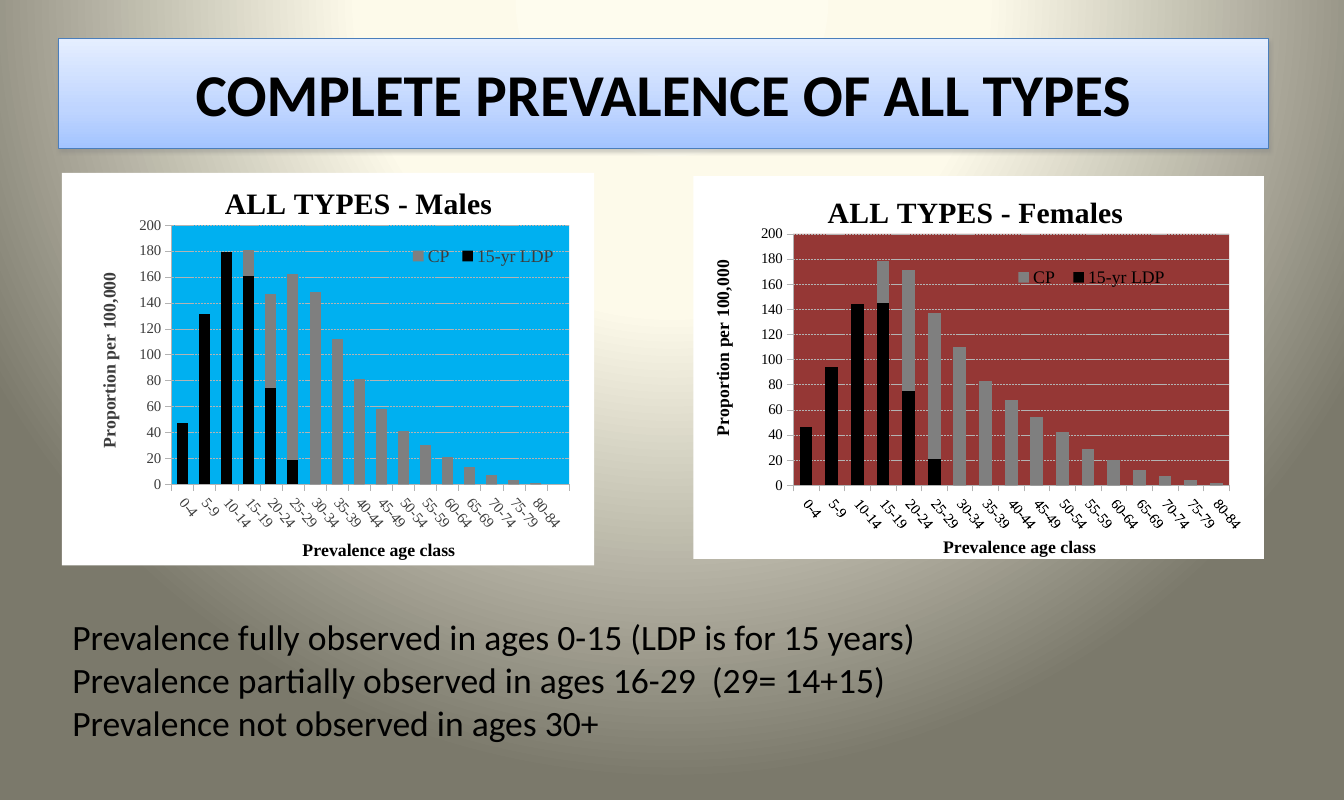
from pptx import Presentation
from pptx.chart.data import CategoryChartData
from pptx.dml.color import RGBColor
from pptx.enum.chart import XL_CHART_TYPE as ChartType, XL_LEGEND_POSITION as LegendPos
from pptx.enum.dml import MSO_LINE_DASH_STYLE as Dash
from pptx.enum.shapes import MSO_SHAPE as Shape
from pptx.enum.text import MSO_ANCHOR as Anchor, MSO_AUTO_SIZE as AutoSize, PP_ALIGN as Align
from pptx.oxml import parse_xml
from pptx.oxml.ns import nsdecls, qn
from pptx.util import Inches, Pt

SERIF = "Times New Roman"
AGE_CLASSES = [f"{age}-{age + 4}" for age in range(0, 85, 5)]

# Positions inside a chart are shares of its width and height
MALES = dict(
    heading="ALL TYPES - Males", box=(0.58, 1.62, 4.99, 3.68), backdrop="00B0F0",
    ink="3C3C3C", number_format="0", ages=AGE_CLASSES + [""], overlay=False,
    observed=[47, 131, 179, 161, 74, 19] + [0] * 11 + [None],
    complete=[0, 0, 0, 20, 73, 143, 148, 112, 81, 58, 41, 30, 21, 13, 7, 3, 1, None],
    plot_at=(0.206, 0.133, 0.747, 0.661), heading_at=(0.296, 0.016),
    age_title_at=(0.446, 0.924), rate_title_at=(0.062, 0.245),
    legend_at=(0.647, 0.177, 0.29, 0.07))
FEMALES = dict(
    heading="ALL TYPES - Females", box=(6.5, 1.65, 5.35, 3.62), backdrop="953735",
    ink="000000", number_format="General", ages=AGE_CLASSES, overlay=True,
    observed=[46, 94, 144, 145, 75, 21] + [0] * 11,
    complete=[0, 0, 0, 33, 96, 116, 110, 83, 68, 54, 42, 29, 20, 12, 7, 4, 2],
    plot_at=(0.175, 0.151, 0.764, 0.657), heading_at=(0.226, 0.033),
    age_title_at=(0.432, 0.932), rate_title_at=(0.026, 0.215),
    legend_at=(0.548, 0.23, 0.3, 0.07))


def rgb(color):
    return RGBColor.from_string(color)


def style_font(font, size, color, name=SERIF, bold=False):
    font.size, font.name, font.bold = Pt(size), name, bold
    font.color.rgb = rgb(color)


def write(frame, text, size=24, color="000000", name="Calibri", bold=False, align=None):
    for index, line in enumerate(text.split("\n")):
        paragraph = frame.add_paragraph() if index else frame.paragraphs[0]
        paragraph.alignment = align
        run = paragraph.add_run()
        run.text = line
        style_font(run.font, size, color, name, bold)


def set_gradient(fill, element, stops, direction):
    """Stops are (percent, colour); direction is the XML of the shading."""
    fill.gradient()
    gradient = next(element.iter(qn("a:gradFill")))
    gradient.clear()
    marks = "".join(f'<a:gs pos="{percent * 1000}"><a:srgbClr val="{color}"/></a:gs>'
                    for percent, color in stops)
    gradient.append(parse_xml(f'<a:gsLst {nsdecls("a")}>{marks}</a:gsLst>'))
    gradient.append(parse_xml(direction))


def area_fill(color):
    return parse_xml(f'<c:spPr {nsdecls("c", "a")}><a:solidFill><a:srgbClr val="{color}"/>'
                     '</a:solidFill><a:ln><a:noFill/></a:ln></c:spPr>')


def place(element, position, target=""):
    """Fix a chart part at x, y and perhaps width, height, as shares of the chart."""
    for old in element.findall(qn("c:layout")):
        element.remove(old)
    modes = '<c:xMode val="edge"/><c:yMode val="edge"/>'
    sizes = "".join(f'<c:{key} val="{share}"/>' for key, share in zip("xywh", position))
    layout = parse_xml(f'<c:layout {nsdecls("c")}><c:manualLayout>{target}{modes}{sizes}'
                       '</c:manualLayout></c:layout>')
    for tag in ("c:tx", "c:legendPos"):
        anchor = element.find(qn(tag))
        if anchor is not None:
            anchor.addnext(layout)
            return
    element.insert(0, layout)


def rotate(element, degrees):
    body = next(element.iter(qn("a:bodyPr")))
    body.set("rot", str(degrees * 60000))
    body.set("vert", "horz")


def add_title(title, text, position, **style):
    write(title.text_frame, text, name=SERIF, bold=True, **style)
    place(title._element, position)


def style_axis(axis, ink):
    style_font(axis.tick_labels.font, 10, ink)
    axis.format.line.color.rgb = rgb("B3B3B3")
    axis.format.line.width = Pt(0.25)


def add_prevalence_chart(slide, group):
    data = CategoryChartData()
    data.categories = group["ages"]
    data.add_series("15-yr LDP", group["observed"])
    data.add_series("CP", group["complete"])
    chart = slide.shapes.add_chart(ChartType.COLUMN_STACKED,
                                   *map(Inches, group["box"]), data).chart
    style_font(chart.font, 10, "000000", "Arial")
    ink = group["ink"]

    # Bars
    plot = chart.plots[0]
    plot.gap_width, plot.overlap, plot.vary_by_categories = 100, 100, False
    for series, color in zip(plot.series, ("000000", "7F7F7F")):
        series.format.fill.solid()
        series.format.fill.fore_color.rgb = rgb(color)

    # Axes
    ages, rates = chart.category_axis, chart.value_axis
    for axis in (ages, rates):
        style_axis(axis, ink)
    rotate(ages._element.find(qn("c:txPr")), 50)
    rates.minimum_scale, rates.maximum_scale, rates.major_unit = 0, 200, 20
    rates.tick_labels.number_format = group["number_format"]
    rates.tick_labels.number_format_is_linked = False
    grid = rates.major_gridlines.format.line
    grid.color.rgb, grid.width = rgb("B3B3B3"), Pt(0.25)
    grid.dash_style = Dash.SQUARE_DOT

    # Titles
    add_title(chart.chart_title, group["heading"], group["heading_at"], size=20)
    add_title(ages.axis_title, "Prevalence age class", group["age_title_at"], size=12)
    rate_title = rates.axis_title
    add_title(rate_title, "Proportion per 100,000", group["rate_title_at"],
              size=12, color=ink)
    rotate(rate_title._element, -90)

    # Legend
    chart.has_legend = True
    chart.legend.position = LegendPos.RIGHT
    chart.legend.include_in_layout = group["overlay"]
    style_font(chart.legend.font, 12, ink)
    place(chart.legend._element, group["legend_at"])

    # Plot area and backdrops
    chart_element = chart._chartSpace.find(qn("c:chart"))
    plot_area = chart_element.find(qn("c:plotArea"))
    place(plot_area, group["plot_at"], '<c:layoutTarget val="inner"/>')
    plot_area.append(area_fill(group["backdrop"]))
    chart_element.addnext(area_fill("FFFFFF"))


def add_banner(slide, text):
    banner = slide.shapes.add_shape(Shape.RECTANGLE, Inches(0.55), Inches(0.36),
                                    Inches(11.34), Inches(1.03))
    properties = banner._element.spPr
    set_gradient(banner.fill, properties, [(0, "E5EEFF"), (65, "BFD5FF"), (100, "A3C4FF")],
                 f'<a:lin {nsdecls("a")} ang="5400000" scaled="0"/>')
    banner.line.color.rgb, banner.line.width = rgb("4A7EBB"), Pt(0.75)
    banner.shadow.inherit = False
    properties.find(qn("a:effectLst")).append(parse_xml(
        f'<a:outerShdw {nsdecls("a")} blurRad="{Pt(3.1)}" dist="{Pt(1.6)}" dir="5400000" '
        'rotWithShape="0"><a:srgbClr val="808080"><a:alpha val="38000"/></a:srgbClr>'
        '</a:outerShdw>'))
    banner.text_frame.vertical_anchor = Anchor.MIDDLE
    write(banner.text_frame, text, size=40, bold=True, align=Align.CENTER)


def add_notes_on_ages(slide, text):
    frame = slide.shapes.add_textbox(Inches(0.58), Inches(5.72),
                                     Inches(8.4), Inches(1.31)).text_frame
    frame.word_wrap = True
    frame.auto_size = AutoSize.SHAPE_TO_FIT_TEXT
    write(frame, text)


def main():
    deck = Presentation()
    deck.slide_width, deck.slide_height = Inches(12.6), Inches(7.5)
    slide = deck.slides.add_slide(deck.slide_layouts[6])
    set_gradient(slide.background.fill, slide.element,
                 [(0, "FEFCEE"), (40, "FDFAEA"), (100, "7B796B")],
                 f'<a:path {nsdecls("a")} path="circle">'
                 '<a:fillToRect l="50000" t="-80000" r="50000" b="180000"/></a:path>')
    add_banner(slide, "COMPLETE PREVALENCE OF ALL TYPES")
    for group in (MALES, FEMALES):
        add_prevalence_chart(slide, group)
    add_notes_on_ages(slide, "Prevalence fully observed in ages 0-15 (LDP is for 15 years)\n"
                             "Prevalence partially observed in ages 16-29  (29= 14+15)\n"
                             "Prevalence not observed in ages 30+")
    deck.save("out.pptx")


if __name__ == "__main__":
    main()
